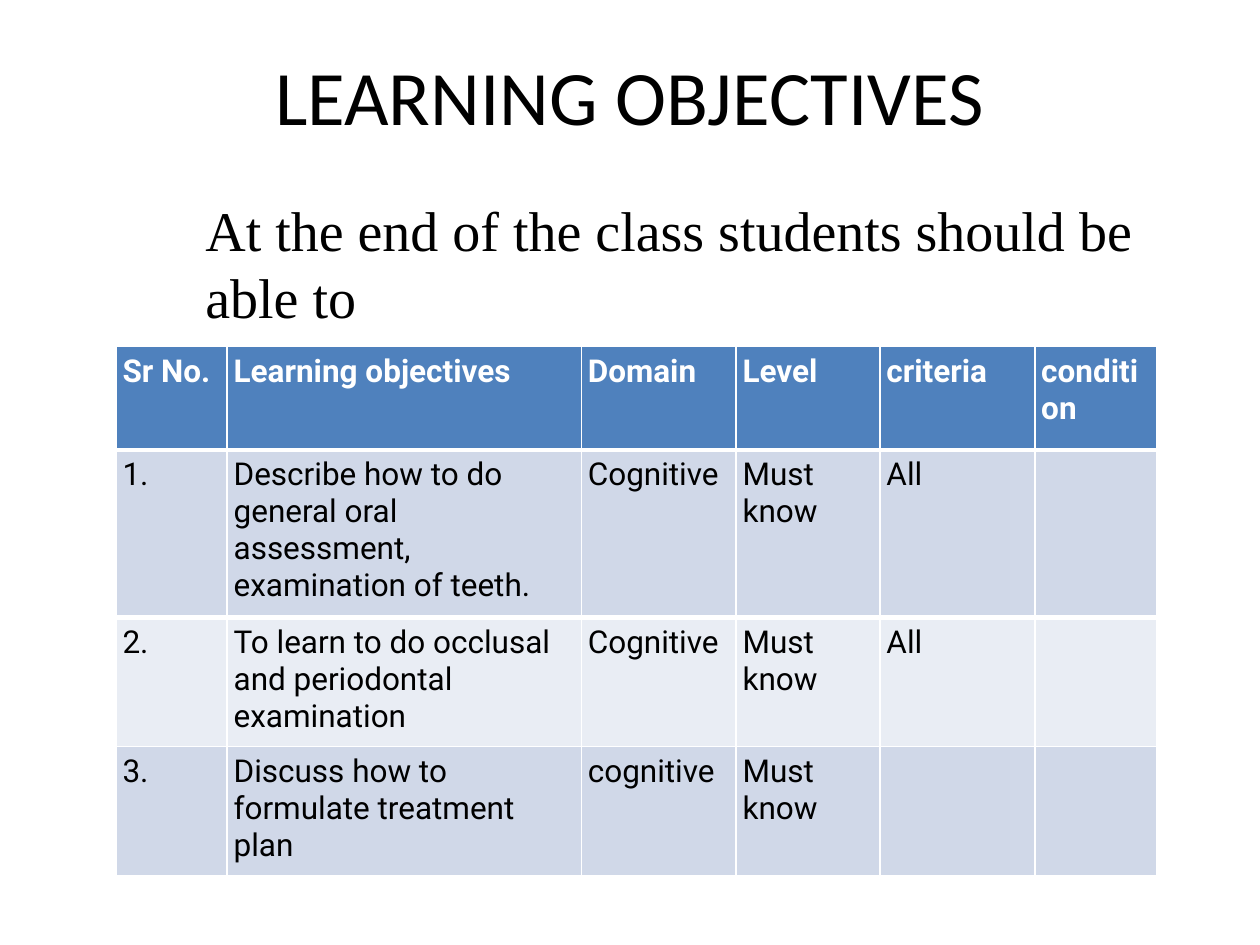
from dataclasses import dataclass

from lxml.etree import SubElement
from pptx import Presentation
from pptx.dml.color import RGBColor
from pptx.enum.text import MSO_ANCHOR, MSO_AUTO_SIZE, PP_ALIGN
from pptx.oxml.ns import qn
from pptx.util import Cm, Pt


@dataclass(frozen=True)
class Theme:
    """Fonts, type sizes, colours and line widths."""
    title_font: str = "Calibri"
    intro_font: str = "Times New Roman"
    table_font: str = "Roboto"
    title_size: int = 44
    intro_size: int = 32
    table_size: int = 18
    ink: str = "000000"
    white: str = "FFFFFF"
    header: str = "4F81BD"
    bands: tuple = ("D0D8E8", "E9EDF4")
    thin: int = 1
    thick: int = 3
    inset: float = 0.13


class SlideBuilder:
    """Places styled elements on the current slide."""

    def __init__(self, prs, theme):
        self.theme = theme
        self.s = prs.slides.add_slide(prs.slide_layouts[5])

    def format_runs(self, tf, font, size, color, bold=False):
        """Apply one character style to all the runs."""
        for p in tf.paragraphs:
            for r in p.runs:
                r.font.name = font
                r.font.size = Pt(size)
                r.font.bold = bold
                r.font.color.rgb = RGBColor.from_string(color)

    def set_insets(self, box):
        """Give a cell or text frame equal margins."""
        box.margin_left = box.margin_right = Cm(self.theme.inset)
        box.margin_top = box.margin_bottom = Cm(self.theme.inset)

    def title(self, text, x, y, w, h):
        """Fill and place the title placeholder."""
        sp = self.s.shapes.title
        sp.left, sp.top, sp.width, sp.height = Cm(x), Cm(y), Cm(w), Cm(h)
        tf = sp.text_frame
        tf.text = text
        tf.vertical_anchor = MSO_ANCHOR.MIDDLE
        tf.paragraphs[0].alignment = PP_ALIGN.CENTER
        self.set_insets(tf)
        self.format_runs(tf, self.theme.title_font, self.theme.title_size, self.theme.ink)

    def intro(self, text, x, y, w, h):
        """Add a wrapped text box."""
        tf = self.s.shapes.add_textbox(Cm(x), Cm(y), Cm(w), Cm(h)).text_frame
        tf.word_wrap = True
        tf.auto_size = MSO_AUTO_SIZE.SHAPE_TO_FIT_TEXT
        tf.text = text
        self.set_insets(tf)
        self.format_runs(tf, self.theme.intro_font, self.theme.intro_size, self.theme.ink)

    def borders(self, cell, top, bottom):
        """Draw the four cell borders in white."""
        thin = self.theme.thin
        tcPr = cell._tc.get_or_add_tcPr()
        for side, width in (("L", thin), ("R", thin), ("T", top), ("B", bottom)):
            ln = SubElement(tcPr, qn(f"a:ln{side}"), w=str(Pt(width)))
            fill = SubElement(ln, qn("a:solidFill"))
            SubElement(fill, qn("a:srgbClr"), val=self.theme.white)

    def table(self, rows, x, y, widths, heights, thick_below):
        """Add a table with a header row and banded body rows."""
        t = self.theme
        table = self.s.shapes.add_table(
            len(rows), len(widths), Cm(x), Cm(y), Cm(sum(widths)), Cm(sum(heights))
        ).table
        for col, width in zip(table.columns, widths):
            col.width = Cm(width)
        for i, (row, height, values) in enumerate(zip(table.rows, heights, rows)):
            row.height = Cm(height)
            is_header = i == 0
            fill = t.header if is_header else t.bands[(i - 1) % 2]
            top = t.thick if i - 1 in thick_below else t.thin
            bottom = t.thick if i in thick_below else t.thin
            for cell, value in zip(row.cells, values):
                self.borders(cell, top, bottom)
                cell.fill.solid()
                cell.fill.fore_color.rgb = RGBColor.from_string(fill)
                self.set_insets(cell)
                cell.text_frame.text = value
                color = t.white if is_header else t.ink
                self.format_runs(cell.text_frame, t.table_font, t.table_size, color, is_header)


def main():
    """Build the learning objectives slide."""
    prs = Presentation()
    prs.slide_width, prs.slide_height = Cm(25.4), Cm(19.05)
    slide = SlideBuilder(prs, Theme())
    slide.title("LEARNING OBJECTIVES", 1.27, 0, 22.86, 3.81)
    objectives = [
        ("Sr No.", "Learning objectives", "Domain", "Level", "criteria", "condition"),
        ("1.", "Describe how to do general oral assessment, examination of teeth.",
         "Cognitive", "Must know", "All", ""),
        ("2.", "To learn to do occlusal and periodontal examination",
         "Cognitive", "Must know", "All", ""),
        ("3.", "Discuss how to formulate treatment plan", "cognitive", "Must know", "", ""),
    ]
    slide.table(
        objectives, 2.34, 6.99,
        widths=(2.24, 7.14, 3.12, 2.9, 3.12, 2.46),
        heights=(2.08, 3.38, 2.6, 2.6),
        thick_below=(0, 1),
    )
    slide.intro("At the end of the class students should be able to", 4.01, 3.81, 20.12, 2.82)
    prs.save("out.pptx")


if __name__ == "__main__":
    main()
